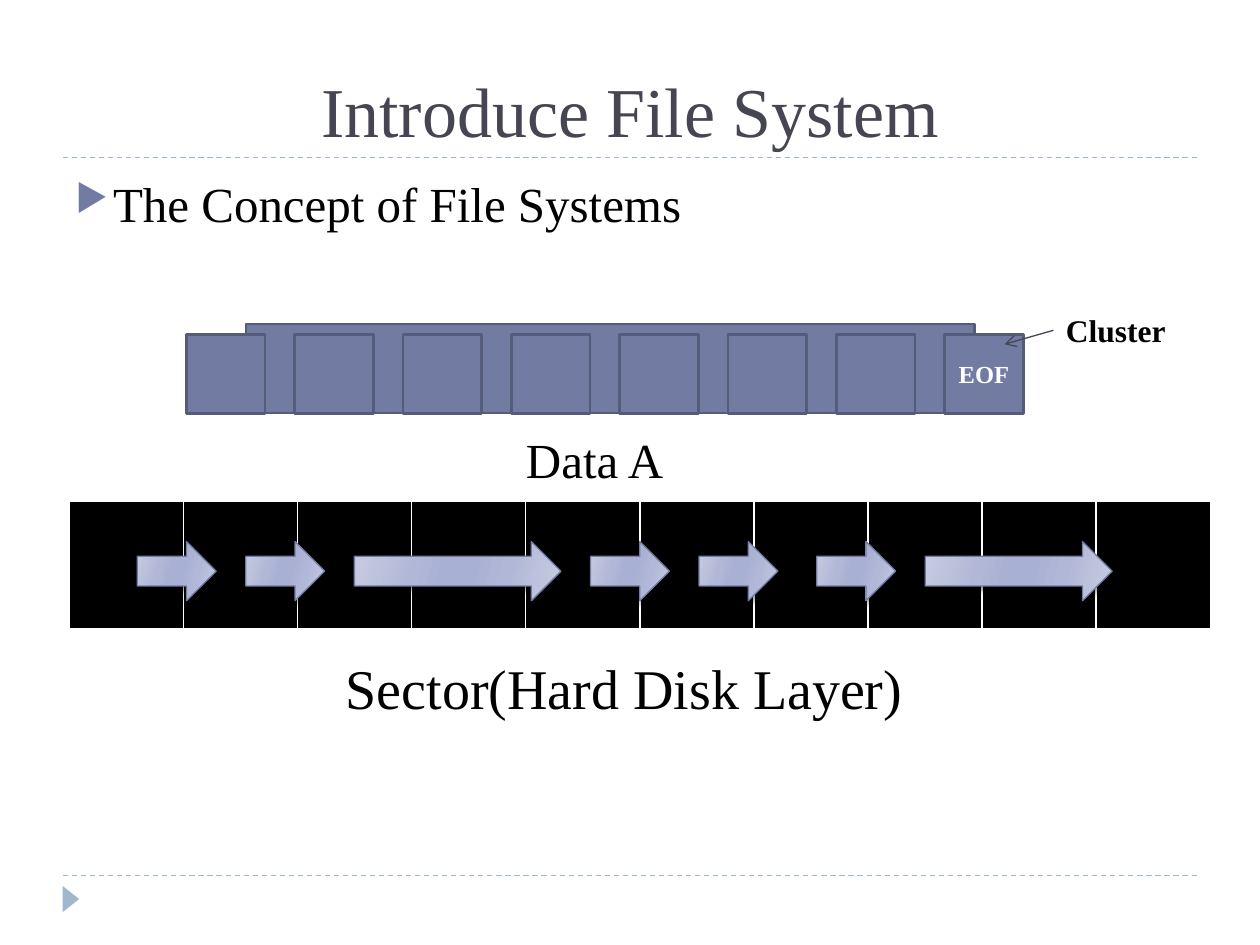
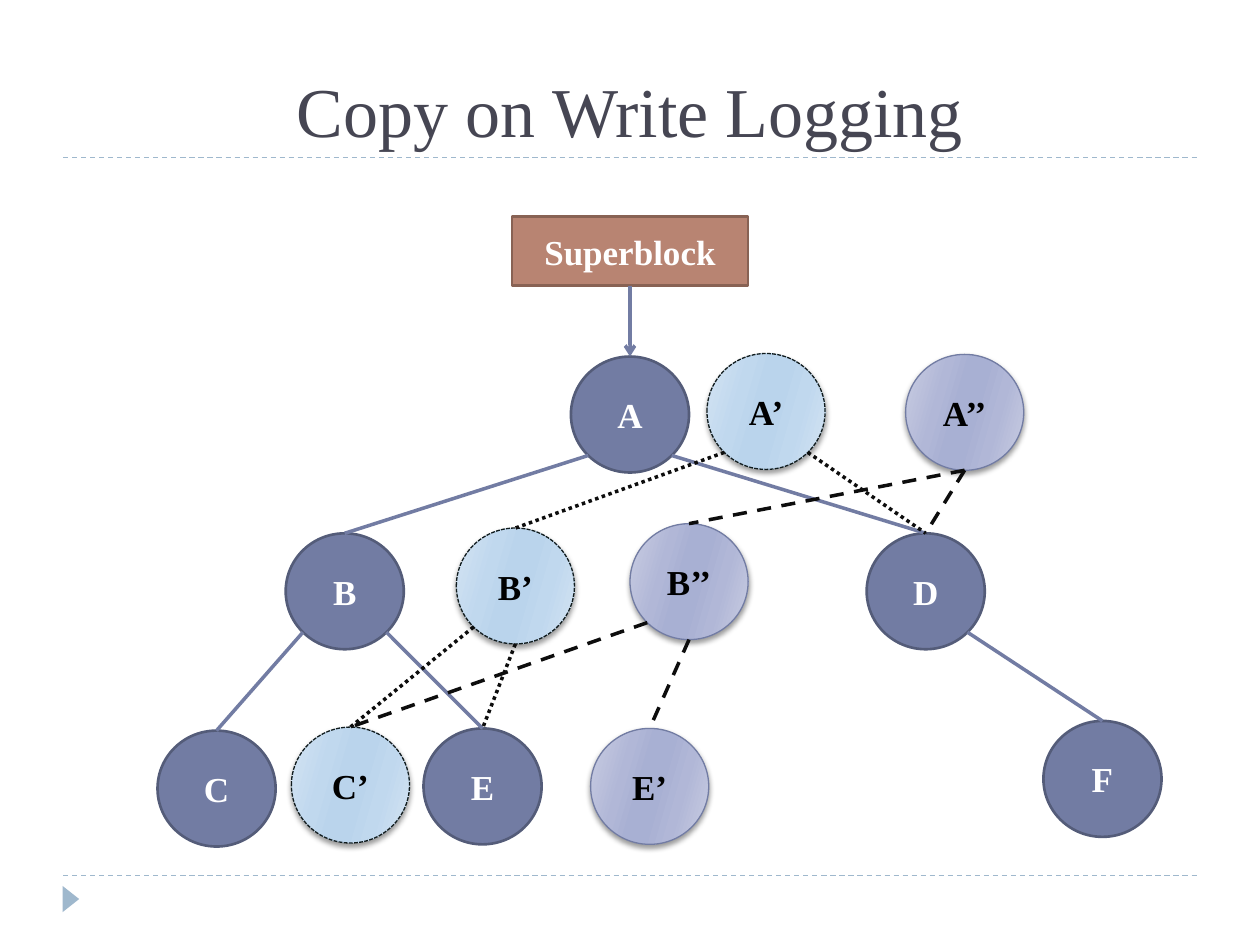
"""Builds two slides on file systems and copy on write logging."""
from dataclasses import dataclass
from typing import Optional

from pptx import Presentation
from pptx.dml.color import RGBColor
from pptx.enum.dml import MSO_LINE
from pptx.enum.shapes import MSO_CONNECTOR, MSO_SHAPE
from pptx.enum.text import MSO_ANCHOR, PP_ALIGN
from pptx.oxml import parse_xml
from pptx.oxml.ns import nsdecls, qn
from pptx.util import Pt

DASH, DOT, SHORT_DASH = MSO_LINE.DASH, MSO_LINE.ROUND_DOT, MSO_LINE.SQUARE_DOT
RECTANGLE, ELLIPSE = MSO_SHAPE.RECTANGLE, MSO_SHAPE.OVAL
RIGHT_ARROW, TRIANGLE = MSO_SHAPE.RIGHT_ARROW, MSO_SHAPE.ISOSCELES_TRIANGLE
STRAIGHT = MSO_CONNECTOR.STRAIGHT
LEFT, CENTER = PP_ALIGN.LEFT, PP_ALIGN.CENTER
TOP, MIDDLE, BOTTOM = MSO_ANCHOR.TOP, MSO_ANCHOR.MIDDLE, MSO_ANCHOR.BOTTOM
TOP_SITE, BOTTOM_SITE = 0, 2
NODE_WIDTH, NODE_HEIGHT = 67.5, 66.25
DIAGONAL = 0.5 ** 0.5


@dataclass(frozen=True)
class Finish:
    """Fill, outline and text colour of a shape; several fills make a gradient."""
    fills: tuple
    line: Optional[str] = None
    width: float = 1.5
    dash: Optional[MSO_LINE] = None
    text: str = "FFFFFF"


@dataclass(frozen=True)
class Theme:
    """Colours, type sizes and finishes of the deck."""
    font: str = "Times New Roman"
    ink: str = "000000"
    paper: str = "FFFFFF"
    heading: str = "464653"
    accent: str = "727CA3"
    rule: str = "9FB8CD"
    new_link: str = "0D0D0D"
    title_size: int = 40
    caption_size: int = 32
    body_size: int = 28
    node_size: int = 20
    label_size: int = 18
    small_size: int = 14
    solid: Finish = Finish(("727CA3",), "545C79")
    superblock: Finish = Finish(("B88472",), "886254")
    marker: Finish = Finish(("9FB8CD",))
    violet: Finish = Finish(("C9CDE2", "B1B7D7", "A8B0D3"), "727CA3", 0.75,
                            text="000000")
    sky: Finish = Finish(("D3E3F2", "C0D8EE", "BAD4EC"), "101B1D", 0.75,
                         SHORT_DASH, "000000")


THEME = Theme()


def set_format(target, values):
    """Set each named attribute of the target."""
    for name, value in values.items():
        setattr(target, name, value)


def write_text(frame, text, size, color, bold=False, align=CENTER, anchor=TOP):
    """Write one formatted paragraph and return it."""
    set_format(frame, {"word_wrap": True, "vertical_anchor": anchor})
    para = frame.paragraphs[0]
    para.alignment = align
    span = para.add_run()
    span.text = text
    set_format(span.font, {"name": THEME.font, "size": Pt(size), "bold": bold})
    span.font.color.rgb = RGBColor.from_string(color)
    return para


def add_label(page, area, text, size, color=THEME.ink, **layout):
    """Add a text box and return its paragraph."""
    box = page.shapes.add_textbox(*map(Pt, area))
    return write_text(box.text_frame, text, size, color, **layout)


def add_bullet(para):
    """Give a paragraph a hanging triangle bullet."""
    para.space_before = Pt(6)
    properties = para._p.get_or_add_pPr()
    indent = Pt(21.6)
    properties.set("marL", str(indent))
    properties.set("indent", str(-indent))
    for tag, content in (
        ("buClr", f'><a:srgbClr val="{THEME.accent}"/></a:buClr>'),
        ("buSzPct", ' val="76000"/>'),
        ("buChar", ' char="▶"/>'),
    ):
        properties.append(parse_xml(f"<a:{tag} {nsdecls('a')}{content}"))


def set_gradient(shape, colors):
    """Fill a shape with a mirrored gradient and give it a soft shadow."""
    shape.fill.gradient()
    edge, between, core = colors
    stops = zip((0, 30, 45, 55, 73, 100), (edge, between, core, core, between, edge))
    marks = "".join(f'<a:gs pos="{place * 1000}"><a:srgbClr val="{color}"/></a:gs>'
                    for place, color in stops)
    properties = shape._element.spPr
    properties.replace(properties.find(qn("a:gradFill")), parse_xml(
        f'<a:gradFill {nsdecls("a")} rotWithShape="1"><a:gsLst>{marks}</a:gsLst>'
        '<a:lin ang="960000" scaled="1"/></a:gradFill>'))
    properties.find(qn("a:effectLst")).append(parse_xml(
        f'<a:outerShdw {nsdecls("a")} blurRad="{Pt(3)}" dist="{Pt(2)}" dir="5400000" '
        'rotWithShape="0"><a:srgbClr val="000000"><a:alpha val="40000"/></a:srgbClr>'
        '</a:outerShdw>'))


def add_block(page, kind, area, finish, text="", size=THEME.node_size):
    """Add a preset shape with its finish and an optional bold text."""
    shape = page.shapes.add_shape(kind, *map(Pt, area))
    shape.shadow.inherit = False
    if len(finish.fills) > 1:
        set_gradient(shape, finish.fills)
    else:
        shape.fill.solid()
        shape.fill.fore_color.rgb = RGBColor.from_string(finish.fills[0])
    if finish.line:
        shape.line.color.rgb = RGBColor.from_string(finish.line)
        set_format(shape.line, {"width": Pt(finish.width), "dash_style": finish.dash})
    else:
        shape.line.fill.background()
    if text:
        write_text(shape.text_frame, text, size, finish.text, bold=True, anchor=MIDDLE)
    return shape


def add_line(page, start, end, color, width, dash=None, arrow=False):
    """Add a straight line with an optional arrowhead at its end."""
    line = page.shapes.add_connector(STRAIGHT, *map(Pt, (*start, *end)))
    line.line.color.rgb = RGBColor.from_string(color)
    set_format(line.line, {"width": Pt(width), "dash_style": dash})
    if arrow:
        line.get_or_add_ln().append(
            parse_xml(f'<a:tailEnd {nsdecls("a")} type="arrow"/>'))
    line._element.spPr.append(parse_xml(f'<a:effectLst {nsdecls("a")}/>'))
    return line


def add_page(deck, title):
    """Add a blank slide with the shared rules, marker and title."""
    page = deck.slides.add_slide(deck.slide_layouts[6])
    for height in (500.4, 90):
        add_line(page, (36, height), (684, height), THEME.rule, 0.75, DASH)
    marker = add_block(page, TRIANGLE, (33, 509, 15, 9.5), THEME.marker)
    marker.rotation = 90
    add_label(page, (36, 12.25, 648, 77.75), title, THEME.title_size, THEME.heading,
              anchor=BOTTOM)
    return page


def add_sectors(page, area, count):
    """Add a one-row table of equal black cells with white borders."""
    table = page.shapes.add_table(1, count, *map(Pt, area)).table
    set_format(table, {"first_row": False, "horz_banding": False})
    for column in table.columns:
        column.width = Pt(area[2] / count)
    for cell in table.rows[0].cells:
        cell.fill.solid()
        cell.fill.fore_color.rgb = RGBColor.from_string(THEME.ink)
        properties = cell._tc.get_or_add_tcPr()
        for order, (side, width) in enumerate(zip("LRTB", (1, 1, 1, 3))):
            properties.insert(order, parse_xml(
                f'<a:ln{side} {nsdecls("a")} w="{Pt(width)}"><a:solidFill>'
                f'<a:srgbClr val="{THEME.paper}"/></a:solidFill></a:ln{side}>'))


def add_node(page, text, left, top, finish):
    """Add one round tree node."""
    return add_block(page, ELLIPSE, (left, top, NODE_WIDTH, NODE_HEIGHT), finish, text)


def add_edge(page, parent, side, child, color, dash):
    """Join a parent's lower left (-1), bottom (0) or lower right (1) to a child."""
    across, down = (side * DIAGONAL, DIAGONAL) if side else (0, 1)
    start = (parent.left.pt + NODE_WIDTH / 2 * (1 + across),
             parent.top.pt + NODE_HEIGHT / 2 * (1 + down))
    edge = add_line(page, start, start, color, 2, dash)
    edge.end_connect(child, TOP_SITE)


def build_file_system(deck):
    """Show a file's clusters above the disk sectors that hold them."""
    page = add_page(deck, "Introduce File System")
    add_sectors(page, (39.6, 286.6, 652, 73.4), 10)
    add_block(page, RECTANGLE, (140.5, 185.25, 416.25, 50.75), THEME.solid)
    texts = [""] * 7 + ["EOF"]
    for index, text in enumerate(texts):
        add_block(page, RECTANGLE, (106.5 + 61.9 * index, 191.25, 45, 45), THEME.solid,
                  text, THEME.small_size)
    add_label(page, (196.5, 242, 286.5, 41), "Data A", THEME.body_size)
    add_label(page, (134.5, 370, 444.5, 46), "Sector(Hard Disk Layer)",
              THEME.caption_size)
    add_label(page, (602, 174.25, 101.5, 29), "Cluster", THEME.label_size, bold=True,
              align=LEFT)
    add_line(page, (602, 188.75), (574, 196.75), THEME.heading, 0.75, arrow=True)
    arrows = ((78.5, 45), (140.5, 45), (202.5, 118), (337.5, 45), (399.5, 45),
              (466.75, 45), (528.75, 106.75))
    for left, width in arrows:
        add_block(page, RIGHT_ARROW, (left, 309.5, width, 33.75), THEME.violet)
    add_bullet(add_label(page, (36, 95.75, 648, 388.75), "The Concept of File Systems",
                         THEME.body_size, align=LEFT))


def build_copy_on_write(deck):
    """Show a block tree with two generations of copied nodes."""
    page = add_page(deck, "Copy on Write Logging")
    superblock = add_block(page, RECTANGLE, (292.5, 123.75, 135, 39.5),
                           THEME.superblock, "Superblock")
    places = {
        THEME.solid: (("A", 326.25, 203.75), ("B", 163.25, 304.75), ("C", 90, 417.5),
                      ("E", 242, 416.25), ("D", 495.25, 304.75), ("F", 596.25, 412)),
        THEME.sky: (("C’", 166.5, 415.5), ("B’", 260.75, 301.75), ("A’", 404, 202)),
        THEME.violet: (("E’", 337.5, 416.25), ("A’’", 517.5, 202.5),
                       ("B’’", 360, 299.25)),
    }
    nodes = {text: add_node(page, text, left, top, finish)
             for finish, group in places.items() for text, left, top in group}
    root_link = add_line(page, (360, 163.25), (360, 203.75), THEME.accent, 2, arrow=True)
    root_link.begin_connect(superblock, BOTTOM_SITE)
    root_link.end_connect(nodes["A"], TOP_SITE)
    generations = (
        (THEME.accent, None, (("A", -1, "B"), ("A", 1, "D"), ("B", -1, "C"),
                              ("B", 1, "E"), ("D", 1, "F"))),
        (THEME.new_link, DOT, (("B’", -1, "C’"), ("A’", -1, "B’"), ("B’", 0, "E"),
                               ("A’", 1, "D"))),
        (THEME.new_link, DASH, (("A’’", 0, "D"), ("B’’", 0, "E’"), ("B’’", -1, "C’"),
                                ("A’’", 0, "B’’"))),
    )
    for color, dash, edges in generations:
        for parent, side, child in edges:
            add_edge(page, nodes[parent], side, nodes[child], color, dash)


def main():
    """Build and save the deck."""
    deck = Presentation()
    set_format(deck, {"slide_width": Pt(720), "slide_height": Pt(540)})
    build_file_system(deck)
    build_copy_on_write(deck)
    deck.save("out.pptx")


if __name__ == "__main__":
    main()
